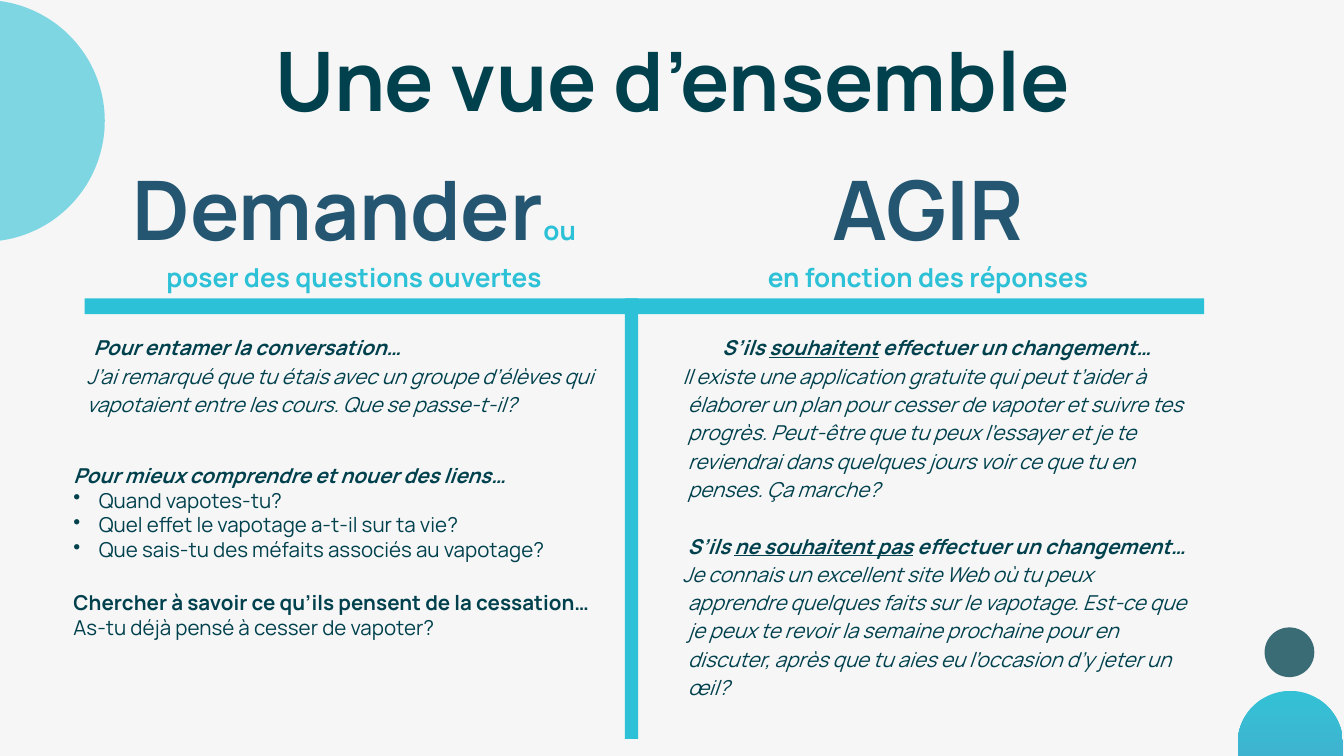
"""Build the overview slide: asking open questions, then acting on the answers."""
import copy
import dataclasses

import lxml.etree
import pptx
import pptx.dml.color
import pptx.enum.shapes
import pptx.enum.text
import pptx.oxml.ns
import pptx.util

Cm = pptx.util.Cm
Rgb = pptx.dml.color.RGBColor.from_string
qn = pptx.oxml.ns.qn
Shapes = pptx.enum.shapes.MSO_SHAPE
Anchor = pptx.enum.text.MSO_ANCHOR
Align = pptx.enum.text.PP_ALIGN


@dataclasses.dataclass(frozen=True)
class Theme:
    font: str = "Manrope"
    background: str = "F6F6F6"
    ink: str = "00414D"
    heading: str = "245671"
    accent: str = "2CC1D6"
    disc: str = "2DC1D6"
    body_gradient: tuple = ((0, "34C1D6"), (0.8, "5D87BC"), (1, "756DAF"))
    display_size: int = 44
    subtitle_size: int = 14
    text_size: int = 11


theme = Theme()
deck = pptx.Presentation()
deck.slide_width, deck.slide_height = Cm(25.4), Cm(14.29)
slide = deck.slides.add_slide(deck.slide_layouts[6])
slide.background.fill.solid()
slide.background.fill.fore_color.rgb = Rgb(theme.background)


def add_block(kind, box, color, opacity=100):
    block = slide.shapes.add_shape(kind, *map(Cm, box))
    block.shadow.inherit = False
    block.line.fill.background()
    block.fill.solid()
    block.fill.fore_color.rgb = Rgb(color)
    if opacity < 100:
        tint = block._element.spPr.find(".//" + qn("a:srgbClr"))
        lxml.etree.SubElement(tint, qn("a:alpha"), val=str(opacity * 1000))
    return block


def add_text(box, paragraphs, anchor=Anchor.TOP):
    frame = slide.shapes.add_textbox(*map(Cm, box)).text_frame
    frame_format = {"word_wrap": True, "vertical_anchor": anchor}
    for side in ("left", "top", "right", "bottom"):
        frame_format["margin_" + side] = Cm(0.25)
    for name, value in frame_format.items():
        setattr(frame, name, value)
    for index, (layout, runs) in enumerate(paragraphs):
        paragraph = frame.add_paragraph() if index else frame.paragraphs[0]
        left, first, bullet = layout.get("indent", (0, 0, None))
        paragraph_format = {
            "alignment": layout.get("align", Align.LEFT),
            "line_spacing": layout.get("spacing", 1.0),
            "space_before": pptx.util.Pt(layout.get("gap", 0)),
        }
        for name, value in paragraph_format.items():
            setattr(paragraph, name, value)
        properties = paragraph._p.get_or_add_pPr()
        properties.set("marL", str(Cm(left)))
        properties.set("indent", str(Cm(first)))
        if bullet:
            lxml.etree.SubElement(properties, qn("a:buChar"), char=bullet)
        for wording, look in runs:
            run = paragraph.add_run()
            run.text = wording
            run.font.color.rgb = Rgb(look.get("color", theme.ink))
            font_format = {
                "name": theme.font,
                "size": pptx.util.Pt(look.get("size", theme.text_size)),
                "bold": look.get("bold", False),
                "italic": look.get("italic", False),
                "underline": look.get("underline", False),
            }
            for name, value in font_format.items():
                setattr(run.font, name, value)


add_block(Shapes.OVAL, (-2.59, 0, 4.57, 4.57), theme.disc, 60)
add_block(Shapes.OVAL, (23.9, 11.86, 0.94, 0.94), theme.ink, 76)
person_body = add_block(Shapes.ROUNDED_RECTANGLE, (23.39, 13.06, 1.99, 5.82), theme.disc)
person_body.adjustments[0] = 0.5
person_body.fill.gradient()
person_body.fill.gradient_angle = 270
stop_list = person_body._element.spPr.find(".//" + qn("a:gsLst"))
stop_list.append(copy.deepcopy(stop_list[0]))
for stop, (position, color) in zip(person_body.fill.gradient_stops, theme.body_gradient):
    stop.position = position
    stop.color.rgb = Rgb(color)

title = {"size": theme.display_size, "bold": True}
heading = {**title, "color": theme.heading}
subtitle = {"size": theme.subtitle_size, "bold": True, "color": theme.accent}
strong = {"bold": True}
speech = {"italic": True}
cue = {**strong, **speech}
stressed_cue = {**cue, "underline": True}

centered = {"align": Align.CENTER}
roomy_centered = {**centered, "spacing": 1.15}
hanging = {"spacing": 1.15, "indent": (1.27, -0.89, None)}
centered_hanging = {**hanging, **centered}
opening = {"spacing": 1.15, "indent": (0.25, 0, None)}
reply = {"spacing": 1.15, "indent": (0.48, -0.1, None)}
question = {"indent": (0.48, -0.48, "•")}

add_text((2.01, 0.3, 21.41, 1.6), [(centered, [("Une vue d’ensemble", title)])])

open_questions = ["Quand vapotes-tu?", "Quel effet le vapotage a-t-il sur ta vie?",
                  "Que sais-tu des méfaits associés au vapotage?"]
add_text((1.14, 6.02, 10.46, 5.21), [
    (hanging, [("Pour entamer la conversation…", cue)]),
    (opening, [("J’ai remarqué que tu étais avec un groupe d’élèves qui vapotaient "
                "entre les cours. Que se passe-t-il?", speech)]),
    ({"gap": 24.9}, [("Pour mieux comprendre et nouer des liens…", cue)]),
    *[(question, [(wording, {})]) for wording in open_questions],
    ({"gap": 15.2}, [("Chercher à savoir ce qu’ils pensent de la cessation…", strong)]),
    ({}, [("As-tu déjà pensé à cesser de vapoter?", {})]),
])

answers = [
    ("souhaitent",
     "Il existe une application gratuite qui peut t’aider à élaborer un plan pour cesser de "
     "vapoter et suivre tes progrès. Peut-être que tu peux l’essayer et je te reviendrai dans "
     "quelques jours voir ce que tu en penses. Ça marche?"),
    ("ne souhaitent pas",
     "Je connais un excellent site Web où tu peux apprendre quelques faits sur le vapotage. "
     "Est-ce que je peux te revoir la semaine prochaine pour en discuter, après que tu aies eu "
     "l’occasion d’y jeter un œil?"),
]
action_paragraphs = []
for order, (wish, response) in enumerate(answers):
    action_paragraphs += [
        ({**centered_hanging, "gap": 15.2 * order},
         [("S’ils ", cue), (wish, stressed_cue), (" effectuer un changement…", cue)]),
        (reply, [(response, speech)]),
    ]
add_text((12.27, 6.02, 10.49, 5.21), action_paragraphs)

add_text((2.11, 3.4, 9.17, 2.39), [
    (roomy_centered, [("Demander", heading), ("ou poser des questions ouvertes", subtitle)]),
], Anchor.BOTTOM)
add_text((12.7, 3.4, 9.68, 2.39), [
    (roomy_centered, [("AGIR", heading)]),
    (roomy_centered, [("en fonction des réponses", subtitle)]),
], Anchor.BOTTOM)

for divider in ((11.81, 5.64, 0.25, 8.33), (1.6, 5.64, 21.16, 0.3)):
    add_block(Shapes.RECTANGLE, divider, theme.accent)

deck.save("out.pptx")
